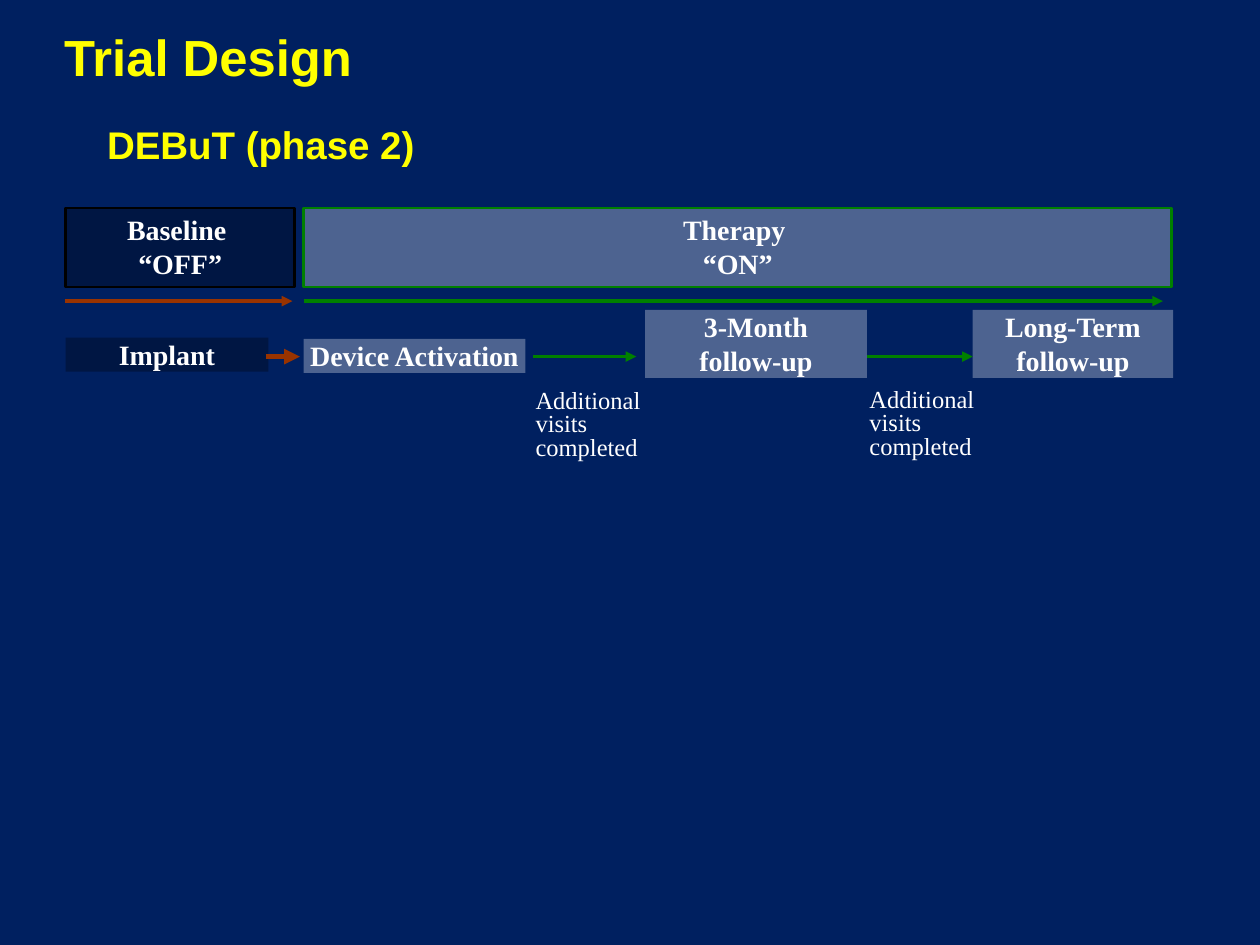
from lxml.etree import SubElement
from pptx import Presentation
from pptx.dml.color import RGBColor
from pptx.enum.shapes import MSO_CONNECTOR, MSO_SHAPE
from pptx.enum.text import MSO_ANCHOR, PP_ALIGN
from pptx.oxml.ns import qn
from pptx.util import Inches, Pt

YELLOW, WHITE, BLACK = "FFFF00", "FFFFFF", "000000"
GREEN, BROWN = "008000", "993300"
SERIF, SANS = "Times New Roman", "Arial"


def color(hex_value):
    return RGBColor.from_string(hex_value)


def write(box, text, size, font, ink, bold, margins, align=PP_ALIGN.LEFT, spacing=None):
    """Fill a box with text; margins are (horizontal, vertical) in inches."""
    frame = box.text_frame
    frame.word_wrap = True
    frame.margin_left = frame.margin_right = Inches(margins[0])
    frame.margin_top = frame.margin_bottom = Inches(margins[1])
    frame.vertical_anchor = MSO_ANCHOR.TOP
    frame.text = text
    for paragraph in frame.paragraphs:
        paragraph.alignment = align
        paragraph.line_spacing = spacing
        for span in paragraph.runs:
            span.font.size = Pt(size)
            span.font.name = font
            span.font.bold = bold
            span.font.color.rgb = color(ink)


deck = Presentation()
deck.slide_width, deck.slide_height = Inches(10), Inches(7.5)
page = deck.slides.add_slide(deck.slide_layouts[6])
page.background.fill.solid()
page.background.fill.fore_color.rgb = color("002060")

# Headings
title = page.shapes.add_textbox(Inches(0.47), Inches(0.09), Inches(9.14), Inches(0.65))
write(title, "Trial Design", 29, SANS, YELLOW, True, (0.04, 0.04), spacing=0.95)
title.text_frame.vertical_anchor = MSO_ANCHOR.BOTTOM

subtitle = page.shapes.add_textbox(Inches(0.76), Inches(0.92), Inches(2.71), Inches(0.46))
write(subtitle, "DEBuT (phase 2)", 22, SANS, YELLOW, True, (0.09, 0.04))

# Phases (outlined) and visits: text, left, top, width, height, tint, outline
stages = [
    ("Baseline \n“OFF”", 0.52, 1.65, 1.82, 0.63, BLACK, BLACK),
    ("Therapy \n“ON”", 2.41, 1.65, 6.89, 0.63, WHITE, GREEN),
    ("Implant", 0.52, 2.68, 1.61, 0.27, BLACK, None),
    ("Device Activation", 2.41, 2.69, 1.76, 0.27, WHITE, None),
    ("3-Month\nfollow-up", 5.12, 2.46, 1.76, 0.54, WHITE, None),
    ("Long-Term follow-up", 7.72, 2.46, 1.59, 0.54, WHITE, None),
]
for text, left, top, width, height, tint, outline in stages:
    stage = page.shapes.add_shape(
        MSO_SHAPE.RECTANGLE, Inches(left), Inches(top), Inches(width), Inches(height))
    stage.shadow.inherit = False
    stage.fill.solid()
    stage.fill.fore_color.rgb = color(tint)
    tint_element = stage.fill._xPr.find(".//" + qn("a:srgbClr"))
    SubElement(tint_element, qn("a:alpha"), val="30000")
    if outline:
        stage.line.color.rgb = color(outline)
        stage.line.width = Pt(1.5)
    else:
        stage.line.fill.background()
    margins = (0.09, 0.04) if outline else (0, 0)
    write(stage, text, 16, SERIF, WHITE, True, margins, PP_ALIGN.CENTER)

# Arrows: start, end, height on the page, colour, weight
arrows = [
    (0.52, 2.32, 2.39, BROWN, 2),
    (2.41, 9.23, 2.39, GREEN, 2),
    (2.11, 2.38, 2.83, BROWN, 3),
    (4.23, 5.05, 2.83, GREEN, 2),
    (6.88, 7.72, 2.83, GREEN, 2),
]
for start, end, y, ink, weight in arrows:
    arrow = page.shapes.add_connector(
        MSO_CONNECTOR.STRAIGHT, Inches(start), Inches(y), Inches(end), Inches(y))
    arrow.line.color.rgb = color(ink)
    arrow.line.width = Pt(weight)
    SubElement(arrow.line._get_or_add_ln(), qn("a:tailEnd"), type="triangle")
    SubElement(arrow._element.spPr, qn("a:effectLst"))

# Notes below the arrows between visits
for left, top in [(4.16, 3.06), (6.81, 3.05)]:
    note = page.shapes.add_textbox(Inches(left), Inches(top), Inches(1.21), Inches(0.65))
    write(note, "Additional visits completed", 14, SERIF, WHITE, False, (0.09, 0.04), spacing=0.8)

deck.save("out.pptx")
